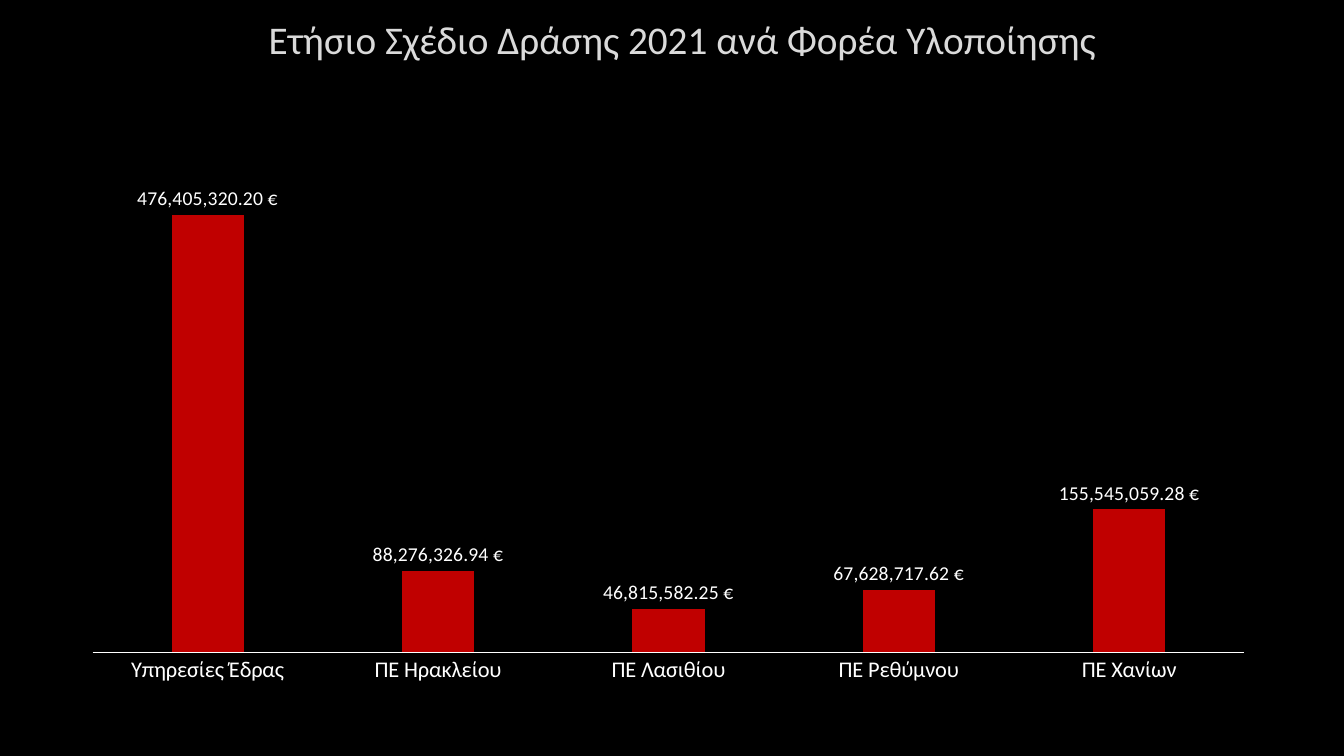
from lxml import etree
from pptx import Presentation
from pptx.chart.data import CategoryChartData
from pptx.dml.color import RGBColor
from pptx.enum.chart import XL_CHART_TYPE as ChartType, XL_LABEL_POSITION as LabelPos
from pptx.enum.chart import XL_TICK_MARK as TickMark
from pptx.enum.text import MSO_ANCHOR as Anchor, PP_ALIGN as Align
from pptx.util import Inches, Pt

FONT = "Calibri"
EURO = "#,##0.00\\ [$€-408]"
BUDGETS = {
    "Υπηρεσίες Έδρας": 476405320.20,
    "ΠΕ Ηρακλείου": 88276326.94,
    "ΠΕ Λασιθίου": 46815582.25,
    "ΠΕ Ρεθύμνου": 67628717.62,
    "ΠΕ Χανίων": 155545059.28,
}
OUTLINE = (
    '<a:ln xmlns:a="http://schemas.openxmlformats.org/drawingml/2006/main" w="9525">'
    '<a:solidFill><a:srgbClr val="404040"><a:alpha val="10000"/></a:srgbClr></a:solidFill>'
    '<a:prstDash val="solid"/></a:ln>'
)


def rgb(value):
    return RGBColor.from_string(value)


def set_font(font, size, color):
    font.name, font.size, font.bold = FONT, Pt(size), False
    font.color.rgb = rgb(color)


def add_title(slide, left, top, width, height):
    title = slide.shapes.title
    title.left, title.top = Inches(left), Inches(top)
    title.width, title.height = Inches(width), Inches(height)
    tf = title.text_frame
    tf.word_wrap = True
    tf.vertical_anchor = Anchor.TOP
    p = tf.paragraphs[0]
    p.alignment = Align.CENTER
    r = p.add_run()
    r.text = "Ετήσιο Σχέδιο Δράσης 2021 ανά Φορέα Υλοποίησης "
    set_font(r.font, 28, "DADADA")
    # Faint outline around the letters
    r.font._element.insert(0, etree.fromstring(OUTLINE))


def add_budget_chart(slide, left, top, width, height):
    data = CategoryChartData(number_format=EURO)
    data.categories = list(BUDGETS)
    data.add_series("Series 1", list(BUDGETS.values()))
    chart = slide.shapes.add_chart(
        ChartType.COLUMN_CLUSTERED,
        Inches(left), Inches(top), Inches(width), Inches(height), data,
    ).chart
    chart.has_legend = False
    chart.has_title = False
    set_font(chart.font, 10, "FFFFFF")

    # Axes
    cat_axis = chart.category_axis
    cat_axis.major_tick_mark = TickMark.NONE
    cat_axis.minor_tick_mark = TickMark.NONE
    cat_axis.format.line.color.rgb = rgb("FFFFFF")
    cat_axis.format.line.width = Pt(0.75)
    set_font(cat_axis.tick_labels.font, 16, "FFFFFF")
    val_axis = chart.value_axis
    val_axis.minimum_scale, val_axis.maximum_scale = 0, 600_000_000
    val_axis.has_major_gridlines = False
    val_axis.visible = False

    # Columns
    plot = chart.plots[0]
    plot.gap_width, plot.overlap = 219, -27
    plot.vary_by_categories = False
    series = plot.series[0]
    series.format.fill.solid()
    series.format.fill.fore_color.rgb = rgb("C00000")

    # Value labels
    labels = series.data_labels
    labels.show_value = True
    labels.position = LabelPos.OUTSIDE_END
    labels.number_format = EURO
    labels.number_format_is_linked = False
    set_font(labels.font, 14, "FFFFFF")


def main():
    prs = Presentation()
    prs.slide_width, prs.slide_height = Inches(13.33), Inches(7.5)
    slide = prs.slides.add_slide(prs.slide_layouts.get_by_name("Title Only"))
    slide.background.fill.solid()
    slide.background.fill.fore_color.rgb = rgb("000000")
    add_title(slide, 1.15, 0.1, 11.32, 0.71)
    add_budget_chart(slide, 0.68, 0.89, 11.9, 6.01)
    prs.save("out.pptx")


if __name__ == "__main__":
    main()
